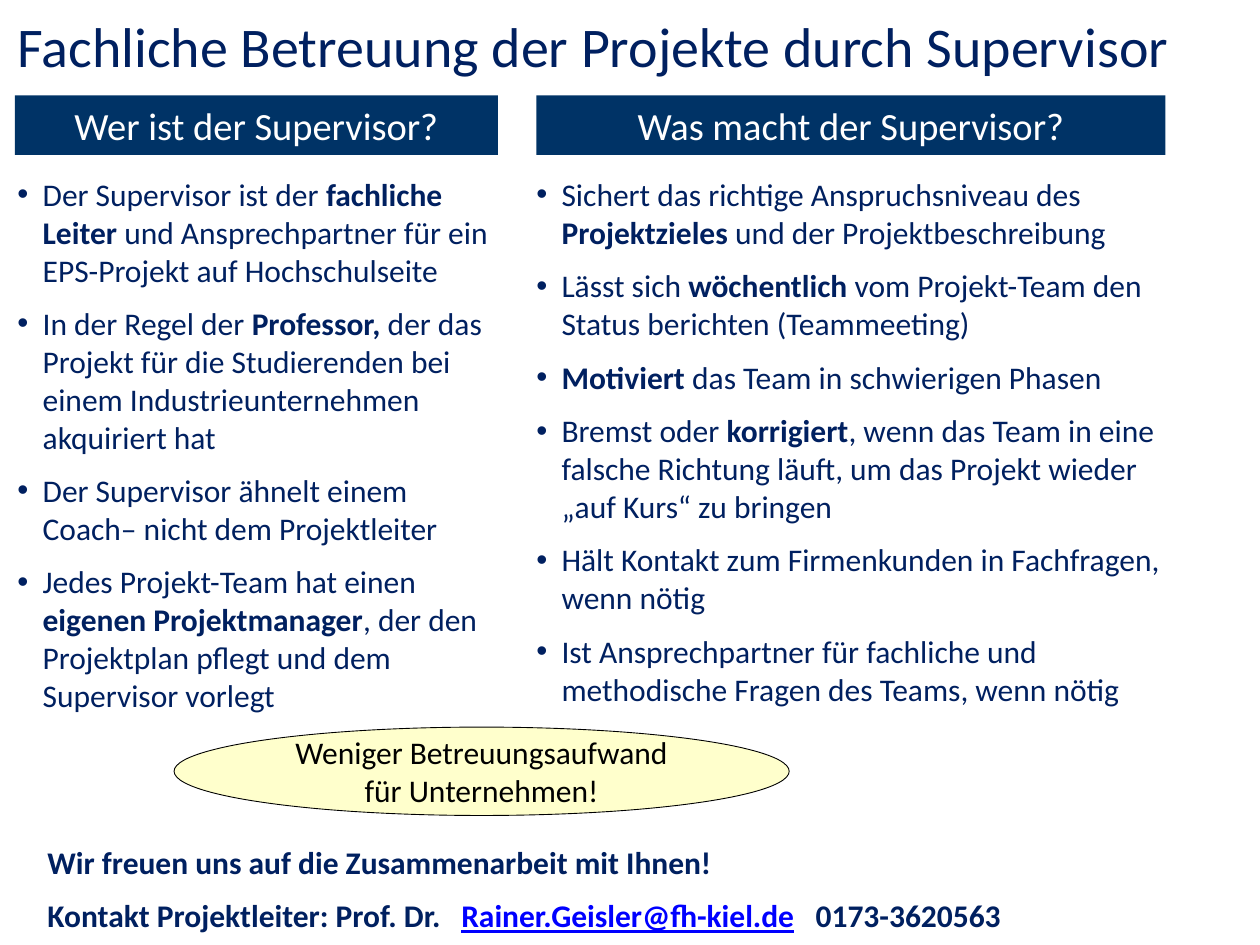
from dataclasses import dataclass
from typing import NamedTuple

from lxml import etree
from pptx import Presentation
from pptx.dml.color import RGBColor
from pptx.enum.shapes import MSO_SHAPE
from pptx.enum.text import MSO_ANCHOR, PP_ALIGN
from pptx.oxml.ns import qn
from pptx.util import Pt

RECTANGLE = MSO_SHAPE.RECTANGLE
OVAL = MSO_SHAPE.OVAL
MIDDLE = MSO_ANCHOR.MIDDLE
CENTER = PP_ALIGN.CENTER

FONT = "Calibri"
COLORS = {
    "text": "002060",
    "header": "003366",
    "white": "FFFFFF",
    "callout": "FFFFCC",
    "black": "000000",
    "mail": "0000FF",
}
BODY_SIZE = 18
PARAGRAPH_GAP = 9
BULLET_INDENT = 14.4
HEADER_TOP, HEADER_HEIGHT = 54.5, 34
LIST_TOP, LIST_HEIGHT = 100, 346.5
CONTACT_TABS = (236.5, 439)


class Bounds(NamedTuple):
    left: float
    top: float
    width: float
    height: float

    def lengths(self):
        return [Pt(value) for value in self]


class Span(NamedTuple):
    text: str
    bold: bool = False


@dataclass
class Column:
    heading: str
    header_left: float
    header_width: float
    list_left: float
    list_width: float
    items: list[list[Span]]


COLUMNS = [
    Column("Wer ist der Supervisor?", 8.5, 276, 10, 279.5, [
        [Span("Der Supervisor ist der "), Span("fachliche Leiter", True),
         Span(" und Ansprechpartner für ein EPS-Projekt auf Hochschulseite")],
        [Span("In der Regel der "), Span("Professor,", True),
         Span(" der das Projekt für die Studierenden bei einem "
              "Industrieunternehmen akquiriert hat")],
        [Span("Der Supervisor ähnelt einem Coach– nicht dem Projektleiter")],
        [Span("Jedes Projekt-Team hat einen "), Span("eigenen Projektmanager", True),
         Span(", der den Projektplan pflegt und dem Supervisor vorlegt")],
    ]),
    Column("Was macht der Supervisor?", 306.5, 359.5, 306.5, 368.5, [
        [Span("Sichert das richtige Anspruchsniveau des "), Span("Projektzieles", True),
         Span(" und der Projektbeschreibung")],
        [Span("Lässt sich "), Span("wöchentlich", True),
         Span(" vom Projekt-Team den Status berichten (Teammeeting)")],
        [Span("Motiviert ", True), Span("das Team in schwierigen Phasen")],
        [Span("Bremst oder "), Span("korrigiert", True),
         Span(", wenn das Team in eine falsche Richtung läuft, um das Projekt "
              "wieder „auf Kurs“ zu bringen")],
        [Span("Hält Kontakt zum Firmenkunden in Fachfragen, wenn nötig")],
        [Span("Ist Ansprechpartner für fachliche und methodische Fragen des Teams, "
              "wenn nötig")],
    ]),
]


def rgb(name: str) -> RGBColor:
    return RGBColor.from_string(COLORS[name])


def style(para, size: float, color: str) -> None:
    para.font.name = FONT
    para.font.size = Pt(size)
    para.font.color.rgb = rgb(color)


def clear_margins(frame) -> None:
    frame.margin_left = frame.margin_right = 0
    frame.margin_top = frame.margin_bottom = 0


def add_text_frame(page, bounds: Bounds):
    frame = page.shapes.add_textbox(*bounds.lengths()).text_frame
    frame.word_wrap = True
    return frame


def next_paragraph(frame, index: int):
    if index == 0:
        return frame.paragraphs[0]
    para = frame.add_paragraph()
    para.space_before = Pt(PARAGRAPH_GAP)
    return para


def add_bullet(para) -> None:
    properties = para._p.get_or_add_pPr()
    properties.set("marL", str(Pt(BULLET_INDENT)))
    properties.set("indent", str(-Pt(BULLET_INDENT)))
    etree.SubElement(properties, qn("a:buFont"), typeface="Arial")
    etree.SubElement(properties, qn("a:buChar"), char="•")


def add_tabs(para, positions: tuple[float, ...]) -> None:
    tabs = etree.SubElement(para._p.get_or_add_pPr(), qn("a:tabLst"))
    for position in positions:
        etree.SubElement(tabs, qn("a:tab"), pos=str(Pt(position)), algn="l")


def add_title(page, text: str) -> None:
    frame = add_text_frame(page, Bounds(3, -19.5, 708.5, 90))
    frame.vertical_anchor = MIDDLE
    para = frame.paragraphs[0]
    para.text = text
    style(para, 32, "text")


def add_label(page, kind, bounds: Bounds, text: str, fill: str, size: float, color: str):
    shape = page.shapes.add_shape(kind, *bounds.lengths())
    shape.shadow.inherit = False
    shape.fill.solid()
    shape.fill.fore_color.rgb = rgb(fill)
    shape.line.fill.background()
    frame = shape.text_frame
    clear_margins(frame)
    frame.word_wrap = False
    frame.vertical_anchor = MIDDLE
    para = frame.paragraphs[0]
    para.text = text
    para.alignment = CENTER
    style(para, size, color)
    return shape


def add_column(page, column: Column) -> None:
    header = Bounds(column.header_left, HEADER_TOP, column.header_width, HEADER_HEIGHT)
    add_label(page, RECTANGLE, header, column.heading, "header", 22, "white")
    frame = add_text_frame(
        page, Bounds(column.list_left, LIST_TOP, column.list_width, LIST_HEIGHT))
    clear_margins(frame)
    for index, spans in enumerate(column.items):
        para = next_paragraph(frame, index)
        add_bullet(para)
        style(para, BODY_SIZE, "text")
        for span in spans:
            run = para.add_run()
            run.text = span.text
            if span.bold:
                run.font.bold = True


def add_callout(page) -> None:
    callout = add_label(page, OVAL, Bounds(99.5, 415.5, 351.5, 50.5),
                        "Weniger Betreuungsaufwand\vfür Unternehmen!",
                        "callout", BODY_SIZE, "black")
    callout.line.color.rgb = rgb("black")
    callout.line.width = Pt(0.5)


def add_contact(page) -> None:
    frame = add_text_frame(page, Bounds(20, 478, 599, 62))
    greeting = next_paragraph(frame, 0)
    greeting.text = "Wir freuen uns auf die Zusammenarbeit mit Ihnen!"
    contact = next_paragraph(frame, 1)
    add_tabs(contact, CONTACT_TABS)
    for para in (greeting, contact):
        style(para, BODY_SIZE, "text")
        para.font.bold = True
    contact.add_run().text = "Kontakt Projektleiter: Prof. Dr.\t"
    mail = contact.add_run()
    mail.text = "Rainer.Geisler@fh-kiel.de"
    mail.font.color.rgb = rgb("mail")
    mail.font.underline = True
    contact.add_run().text = "\t0173-3620563"


def main() -> None:
    deck = Presentation()
    deck.slide_width, deck.slide_height = Pt(720), Pt(540)
    page = deck.slides.add_slide(deck.slide_layouts[6])
    add_title(page, "Fachliche Betreuung der Projekte durch Supervisor")
    for column in COLUMNS:
        add_column(page, column)
    add_callout(page)
    add_contact(page)
    deck.save("out.pptx")


if __name__ == "__main__":
    main()
